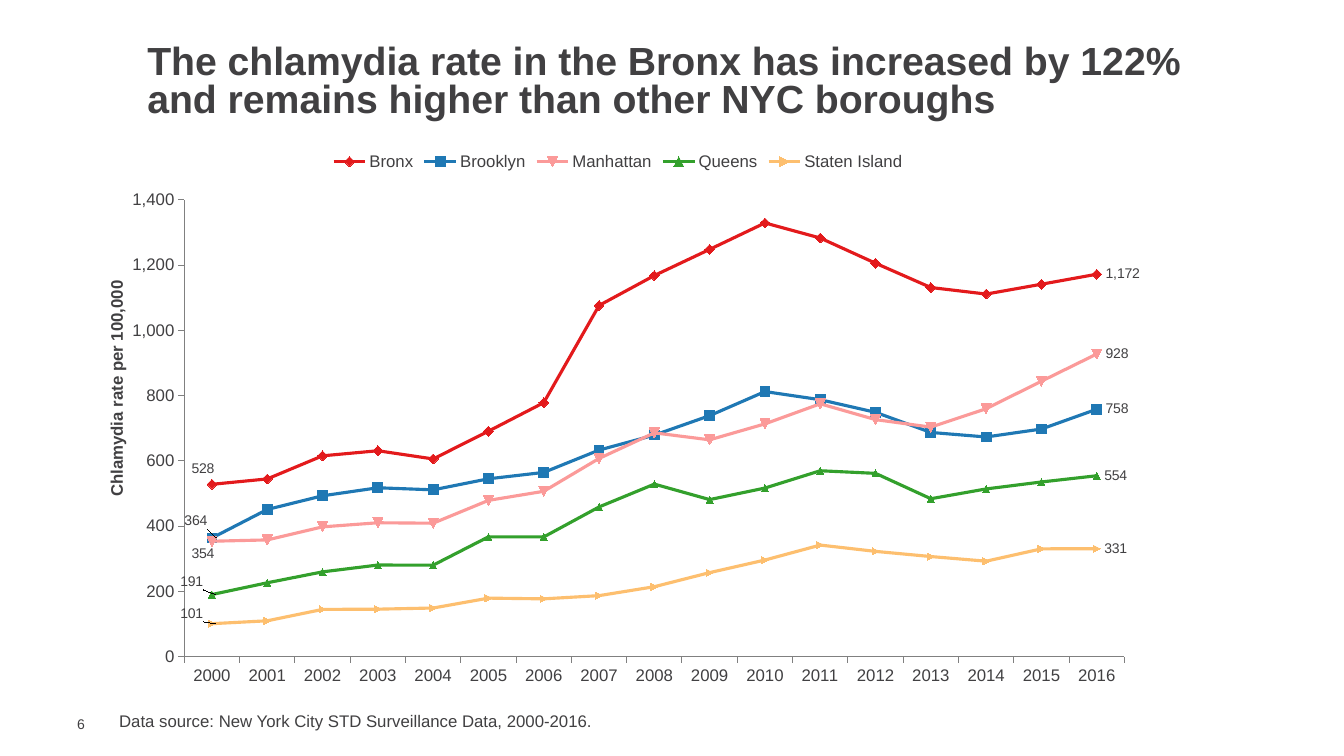
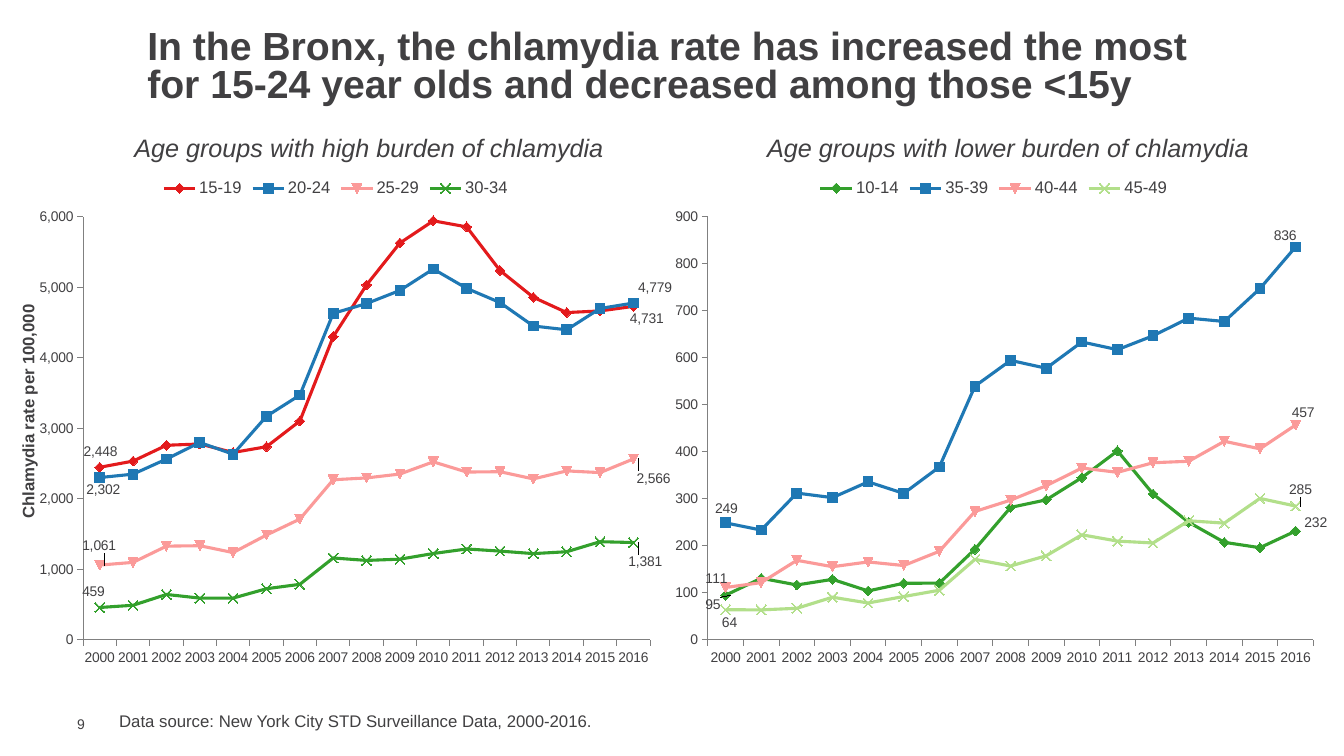
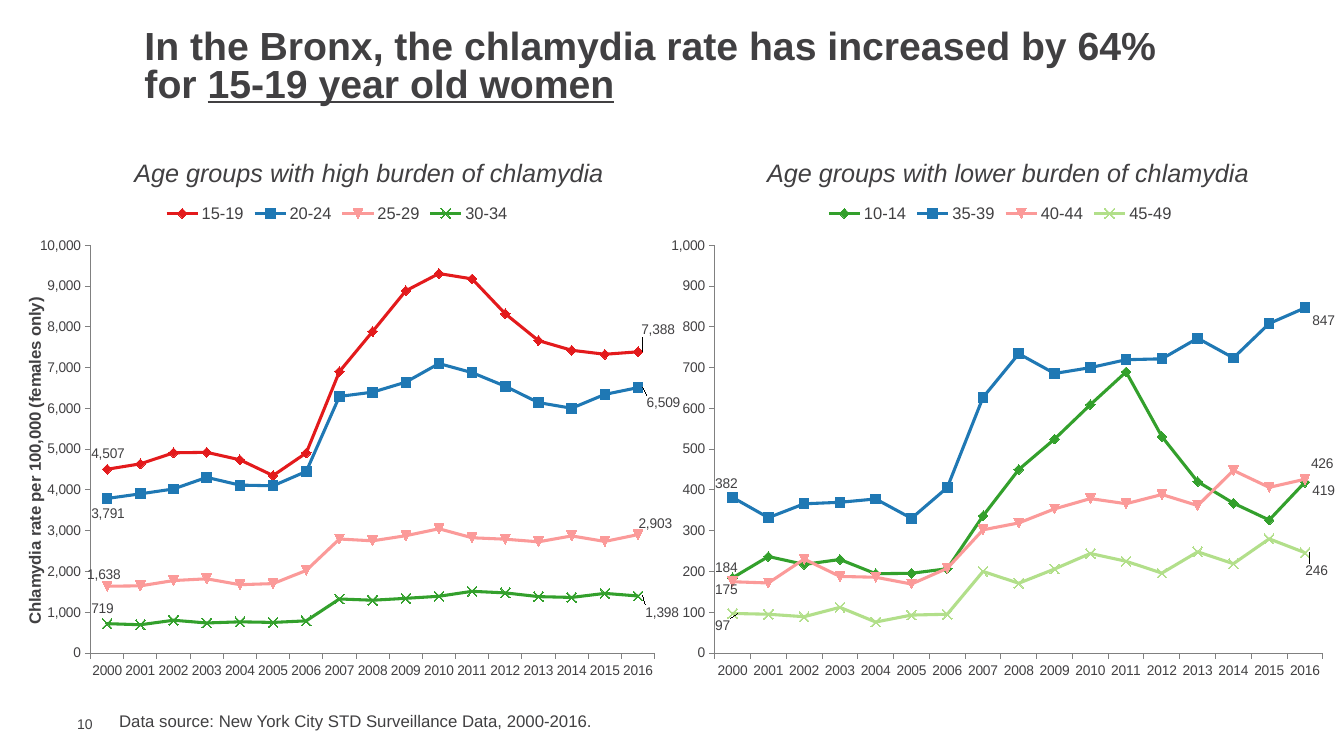
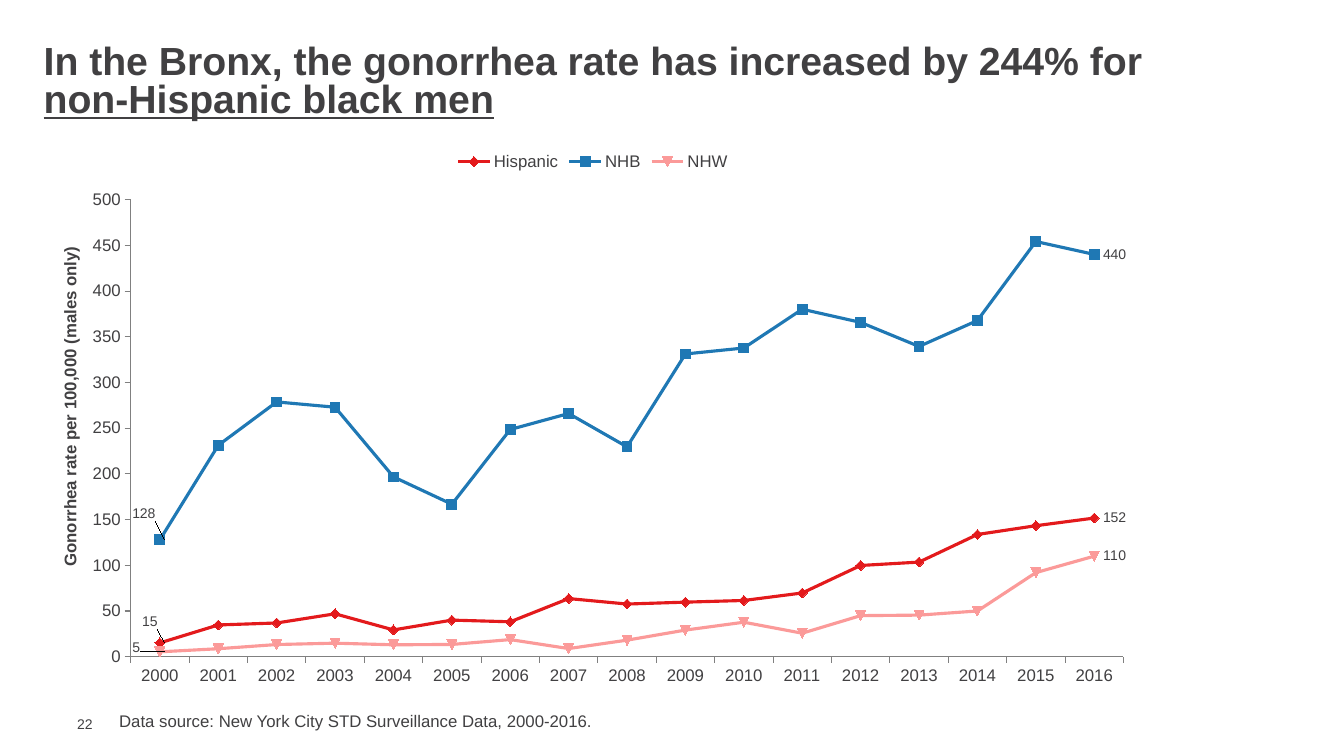
"""Builds four slides of line charts on infection rates in New York City."""
import dataclasses

import pptx
import pptx.chart.data
import pptx.dml.color
import pptx.enum.chart
import pptx.enum.text
import pptx.oxml
import pptx.oxml.ns
import pptx.util

Pt = pptx.util.Pt
Mark = pptx.enum.chart.XL_MARKER_STYLE
Align = pptx.enum.text.PP_ALIGN
Anchor = pptx.enum.text.MSO_ANCHOR
Qn = pptx.oxml.ns.qn


@dataclasses.dataclass(frozen=True)
class Theme:
    """Colours, font and type sizes of the deck."""
    ink: str = "414042"
    axis: str = "808080"
    red: str = "E31A1C"
    blue: str = "1F78B4"
    pink: str = "FB9A99"
    green: str = "33A02C"
    lime: str = "B2DF8A"
    gold: str = "FDBF6F"
    face: str = "Arial"
    head: int = 28
    sub: int = 18
    body: int = 12
    small: int = 10
    digits: str = "#,##0"


THEME = Theme()
YEARS = [str(year) for year in range(2000, 2017)]
SOURCE = "Data source: New York City STD Surveillance Data, 2000-2016."
HIGH = "Age groups with high burden of chlamydia"
LOW = "Age groups with lower burden of chlamydia"
RATE = "Chlamydia rate per 100,000"

TRIO = [(THEME.red, Mark.DIAMOND, 7), (THEME.blue, Mark.SQUARE, 7),
        (THEME.pink, Mark.AUTOMATIC, 7)]
AREAS = TRIO + [(THEME.green, Mark.AUTOMATIC, 5),
                (THEME.gold, Mark.AUTOMATIC, 5)]
OLDER = TRIO + [(THEME.green, Mark.X, 7)]
OTHER = [(THEME.green, Mark.DIAMOND, 7)] + TRIO[1:] + [(THEME.lime, Mark.X, 7)]


def layout(spot, target="", mode="edge"):
    """Return the XML of a manual chart layout from fractions x, y, w and h."""
    parts = [target and f'<c:layoutTarget val="{target}"/>']
    if mode == "edge":
        parts += ['<c:xMode val="edge"/>', '<c:yMode val="edge"/>']
    parts += [f'<c:{key} val="{val:.4f}"/>' for key, val in zip("xywh", spot)]
    return (f'<c:layout {pptx.oxml.ns.nsdecls("c")}><c:manualLayout>'
            + "".join(parts) + "</c:manualLayout></c:layout>")


def place(node, index, spot, target=""):
    """Give a chart part a manual layout as its child at the index."""
    for old in node.findall(Qn("c:layout")):
        node.remove(old)
    node.insert(index, pptx.oxml.parse_xml(layout(spot, target)))


def labels(moves, wide, high):
    """Return labels for the first and last point, moved by points."""
    flags = "".join(f'<c:show{key} val="%d"/>' if key == "Val"
                    else f'<c:show{key} val="0"/>'
                    for key in ("LegendKey", "Val", "CatName", "SerName",
                                "Percent", "BubbleSize"))
    items = ""
    for index, (x, y) in zip((0, len(YEARS) - 1), moves):
        shift = layout((x / wide, y / high), mode="") if x or y else ""
        items += (f'<c:dLbl><c:idx val="{index}"/>{shift}'
                  f'<c:numFmt formatCode="{THEME.digits}" sourceLinked="0"/>'
                  f'<c:dLblPos val="r"/>{flags % 1}</c:dLbl>')
    lead = ('<c:extLst><c:ext uri="{CE6537A1-D6FC-4f65-9D91-7224C49458BB}" '
            'xmlns:c15="http://schemas.microsoft.com/office/drawing/2012/chart">'
            '<c15:showLeaderLines val="1"/></c:ext></c:extLst>')
    return pptx.oxml.parse_xml(
        f'<c:dLbls {pptx.oxml.ns.nsdecls("c")}>{items}{flags % 0}{lead}</c:dLbls>')


class Deck:
    """Holds the theme, the presentation and the current slide."""

    def __init__(self, theme):
        """Start an empty wide deck."""
        self.theme = theme
        self.file = pptx.Presentation()
        self.file.slide_width, self.file.slide_height = Pt(960), Pt(540)
        self.slide = None

    def style(self, font, size, color=None, **more):
        """Set a font from a dict of format values."""
        form = {"name": self.theme.face, "size": Pt(size), **more}
        for key, val in form.items():
            setattr(font, key, val)
        self.tint(font.color, color or self.theme.ink)

    def tint(self, color, code):
        """Set a colour from its hex code."""
        color.rgb = pptx.dml.color.RGBColor.from_string(code)

    def paint(self, form, code, width):
        """Set the line colour and width of a chart part."""
        self.tint(form.line.color, code)
        form.line.width = Pt(width)

    def page(self, number, title, box, under=""):
        """Add a slide with its title, number and data source."""
        self.slide = self.file.slides.add_slide(self.file.slide_layouts[5])
        head = self.slide.shapes.title
        head.left, head.top, head.width, head.height = map(Pt, box)
        frame = head.text_frame
        form = {"auto_size": pptx.enum.text.MSO_AUTO_SIZE.NONE,
                "word_wrap": True, "vertical_anchor": Anchor.MIDDLE}
        for key, val in form.items():
            setattr(frame, key, val)
        para = frame.paragraphs[0]
        para.alignment, para.line_spacing = Align.LEFT, 0.8
        for text, line in ((title, False), (under, True)):
            if text:
                run = para.add_run()
                run.text = text
                self.style(run.font, self.theme.head, bold=True, underline=line)
        edge = {"margin_left": Pt(7.2), "margin_right": 0, "margin_top": 0,
                "margin_bottom": 0, "vertical_anchor": Anchor.MIDDLE}
        self.text(str(number), (48, 511, 31, 12), self.theme.small, edge)
        self.text(SOURCE, (78, 504, 714, 22), self.theme.body)

    def text(self, words, box, size, edge=None, align=Align.LEFT, **more):
        """Add a text box of one paragraph."""
        frame = self.slide.shapes.add_textbox(*map(Pt, box)).text_frame
        for key, val in {"word_wrap": True, **(edge or {})}.items():
            setattr(frame, key, val)
        para = frame.paragraphs[0]
        para.alignment = align
        run = para.add_run()
        run.text = words
        self.style(run.font, size, **more)

    def pair(self, top):
        """Add the two headings above a pair of charts."""
        for left, words in ((47.5, HIGH), (504, LOW)):
            self.text(words, (left, top, 432, 29), self.theme.sub,
                      align=Align.CENTER, italic=True)

    def chart(self, box, plot, looks, rows, top, step, size, name="", spot=None):
        """Add a line chart with labels at both ends of each line."""
        data = pptx.chart.data.CategoryChartData(number_format="0.0")
        data.categories = YEARS
        for row in rows:
            data.add_series(row[0], row[1])
        kind = pptx.enum.chart.XL_CHART_TYPE.LINE_MARKERS
        chart = self.slide.shapes.add_chart(kind, *map(Pt, box), data).chart
        chart.has_title = False
        self.style(chart.font, self.theme.small)
        chart.has_legend = True
        chart.legend.position = pptx.enum.chart.XL_LEGEND_POSITION.TOP
        chart.legend.include_in_layout = False
        self.style(chart.legend.font, self.theme.body)
        chart.plots[0].vary_by_categories = False
        for axis in (chart.category_axis, chart.value_axis):
            axis.has_major_gridlines = False
            axis.major_tick_mark = pptx.enum.chart.XL_TICK_MARK.OUTSIDE
            self.style(axis.tick_labels.font, size)
            self.paint(axis.format, self.theme.axis, 0.75)
        form = {"minimum_scale": 0, "maximum_scale": top, "major_unit": step}
        for key, val in form.items():
            setattr(chart.value_axis, key, val)
        ticks = chart.value_axis.tick_labels
        ticks.number_format, ticks.number_format_is_linked = self.theme.digits, False
        if name:
            self.name(chart.value_axis.axis_title, name, spot)
        area = chart.plots[0]._element.getparent()
        place(area, 0, plot, "inner")
        for line, row, look in zip(chart.plots[0].series, rows, looks):
            self.line(line, look, labels(row[2:], *box[2:]))

    def name(self, title, words, spot):
        """Write an upright axis title at the spot."""
        run = title.text_frame.paragraphs[0].add_run()
        run.text = words
        self.style(run.font, self.theme.body, bold=True)
        body = title._element.find(".//" + Qn("a:bodyPr"))
        body.set("rot", "-5400000")
        body.set("vert", "horz")
        place(title._element, 1, spot)

    def line(self, line, look, tags):
        """Format one line of a chart with its markers and labels."""
        color, mark, size = look
        line.smooth = False
        self.paint(line.format, color, 2.25)
        line.marker.style, line.marker.size = mark, size
        line.marker.format.fill.solid()
        self.tint(line.marker.format.fill.fore_color, color)
        self.paint(line.marker.format, color, 0.75)
        line._element.find(Qn("c:cat")).addprevious(tags)


END = (0, 0)
BOROUGHS = [
    ("Bronx", [528.1, 544.6, 615.4, 630.9, 605.8, 690.9, 778.4, 1076.2, 1167.8,
               1248, 1328.9, 1282.7, 1205.5, 1131.1, 1111.1, 1141.2, 1171.9],
     (-21, -11), END),
    ("Brooklyn", [363.7, 451, 492.9, 517.5, 511.2, 545, 564.6, 633, 678.9,
                  738.4, 812.4, 787.4, 748.8, 687, 673.1, 697.4, 758.2],
     (-26, -12), END),
    ("Manhattan", [353.7, 357.8, 397.8, 410.3, 408.9, 478.8, 506.7, 607.4, 685.8,
                   664.4, 713.2, 774.9, 726.3, 703.3, 759.8, 844.1, 927.5],
     (-21, 9), END),
    ("Queens", [190.5, 226.4, 259.9, 280.8, 280.4, 367.2, 366.9, 458.8, 528.7,
                481.3, 516.7, 569.7, 561.6, 484, 514, 535.2, 554.3],
     (-28, -9), END),
    ("Staten Island", [101.1, 110, 144.9, 145.6, 149.1, 179.4, 177.2, 187.1, 214.4,
                       257.6, 296.1, 342, 322.6, 306.8, 292.6, 330.4, 330.9],
     (-28, -7), END),
]
ALL_HIGH = [
    ("15-19", [2448, 2536, 2760.2, 2778.7, 2657.8, 2739.6, 3104.2, 4301.6, 5035.8,
               5630.1, 5945, 5858.7, 5240.2, 4860.3, 4643.5, 4666.5, 4731.1],
     (-18, -11), (-9, 9)),
    ("20-24", [2302.3, 2350.9, 2564.8, 2800, 2633.9, 3171.8, 3473, 4632.8, 4771.3,
               4956.9, 5261.7, 4986.7, 4785.5, 4452.7, 4399.1, 4701.7, 4778.8],
     (-16, 9), (-3, -11)),
    ("25-29", [1061.1, 1099, 1329.2, 1335.5, 1238.4, 1487, 1713.4, 2271.5, 2297.4,
               2352.4, 2524.9, 2380.6, 2385.3, 2282.9, 2396.6, 2372.4, 2566],
     (-19, -14), (-4, 14)),
    ("30-34", [458.9, 490.4, 644.4, 592.2, 592.5, 725.5, 787.7, 1161.9, 1126.7,
               1144.8, 1224.7, 1289.7, 1259.2, 1223.5, 1250.2, 1392.5, 1380.9],
     (-19, -11), (-10, 14)),
]
ALL_LOW = [
    ("10-14", [95, 131.1, 116.8, 128.7, 104.1, 120.5, 120.7, 192.9, 281.8,
               297.9, 345.2, 402.1, 310.4, 250.2, 207.5, 196.1, 231.5],
     (-21, 7), (0, -6)),
    ("35-39", [248.9, 233.6, 312.3, 302.6, 336.2, 311.6, 367.9, 540, 594.8,
               578, 634, 617.6, 647.1, 684.7, 677.5, 747.5, 836.2],
     (-14, -10), (-22, -8)),
    ("40-44", [111.4, 121.8, 169.3, 155.7, 165.8, 158.1, 188.4, 273.2, 297.3,
               327.9, 365.7, 356.5, 376.9, 380, 422.5, 406.5, 457.2],
     (-21, -6), (-9, -9)),
    ("45-49", [64.1, 63.8, 67.2, 90.7, 78.5, 92.2, 105.6, 171.3, 157.2,
               178.9, 223.6, 210.1, 206.2, 253.4, 248.4, 301, 284.7],
     (-9, 9), (-11, -12)),
]
WOMEN_HIGH = [
    ("15-19", [4507, 4639.3, 4909.6, 4920.8, 4738.1, 4350.4, 4906.2, 6902.6, 7885.1,
               8883.1, 9306.3, 9175, 8319.7, 7662.2, 7424.9, 7327, 7387.8],
     (-18, -11), (-4, -16)),
    ("20-24", [3790.6, 3902.9, 4022.4, 4306.9, 4117, 4101.2, 4452.2, 6293.9, 6397.2,
               6643.1, 7099.1, 6876.4, 6542.9, 6141.8, 6003.4, 6343.1, 6509.1],
     (-18, 11), (0, 11)),
    ("25-29", [1638.4, 1645.9, 1776.3, 1819.8, 1675.4, 1701.8, 2025.3, 2795.2, 2751.1,
               2876.1, 3047, 2825.6, 2791, 2726.3, 2871.7, 2736.3, 2903.4],
     (-21, -8), (-6, -8)),
    ("30-34", [719.4, 692.8, 803, 736.5, 764.8, 749.9, 788.8, 1325.3, 1293.9,
               1340.6, 1391.7, 1513.3, 1474.3, 1382.2, 1363.2, 1461.9, 1397.8],
     (-18, -11), (-1, 12)),
]
WOMEN_LOW = [
    ("10-14", [184.4, 236.6, 217.2, 229.3, 194.4, 195.5, 206.7, 336.3, 450,
               524.6, 609.1, 689.4, 530.9, 420.1, 367.4, 326.1, 419],
     (-19, -7), (-1, 6)),
    ("35-39", [381.6, 331.8, 365.9, 369.6, 377.8, 330.3, 405.7, 627, 734,
               685.6, 699.9, 719.4, 721.5, 772, 723.7, 808.1, 846.5],
     (-19, -10), (-1, 9)),
    ("40-44", [174.7, 171.7, 230.3, 187.8, 185.7, 169.1, 207.6, 302, 319,
               353.4, 378.6, 366.1, 388.7, 361.6, 447.7, 406.2, 426.1],
     (-19, 6), (-2, -11)),
    ("45-49", [97, 95, 89, 112, 76, 93, 95, 200, 171,
               206, 244, 225, 196, 248, 219, 280, 246],
     (-19, 9), (-6, 13)),
]
MEN = [
    ("Hispanic", [15.1, 34.7, 36.9, 46.9, 29.3, 40, 38.2, 63.6, 57.6,
                  59.7, 61.5, 69.7, 99.8, 103.5, 133.7, 143.3, 151.7],
     (-19, -15), END),
    ("NHB", [127.8, 231.3, 278.8, 273, 196.7, 166.8, 248.6, 266.1, 229.6,
             331.3, 337.8, 380.2, 365.8, 339.5, 367.9, 454.3, 440.2],
     (-26, -19), END),
    ("NHW", [5.3, 8.7, 13.3, 14.8, 13, 13.4, 18.7, 8.9, 18.1,
             29.1, 37.7, 25.7, 44.9, 45.5, 50, 92, 110],
     (-26, -3), END),
]


def main():
    """Build and save the deck."""
    deck = Deck(THEME)
    big, small = THEME.body, THEME.small

    deck.page(6, "The chlamydia rate in the Bronx has increased by 122% and "
              "remains higher than other NYC boroughs", (98, 29, 765, 61))
    deck.chart((65.5, 101, 752, 390), (0.088, 0.107, 0.893, 0.837), AREAS,
               BOROUGHS, 1400, 200, big, RATE, (0.011, 0.249))

    deck.page(9, "In the Bronx, the chlamydia rate has increased the most for "
              "15-24 year olds and decreased among those <15y", (98, 18, 765, 61))
    deck.chart((6, 120, 474, 361), (0.114, 0.097, 0.866, 0.837), OLDER,
               ALL_HIGH, 6000, 1000, small, RATE, (0.01, 0.259))
    deck.chart((474, 120, 474, 361), (0.067, 0.097, 0.917, 0.837), OTHER,
               ALL_LOW, 900, 100, small)
    deck.pair(91)

    deck.page(10, "In the Bronx, the chlamydia rate has increased by 64% for ",
              (96, 18, 768, 61), "15-19 year old women")
    deck.chart((6, 138, 480, 348), (0.125, 0.107, 0.858, 0.837), OLDER,
               WOMEN_HIGH, 10000, 1000, small, RATE + " (females only)",
               (0.02, 0.193))
    deck.chart((479.5, 138, 474, 348), (0.063, 0.107, 0.931, 0.837), OTHER,
               WOMEN_LOW, 1000, 100, small)
    deck.pair(109)

    deck.page(22, "In the Bronx, the gonorrhea rate has increased by 244% for ",
              (24, 29, 864, 61), "non-Hispanic black men")
    deck.chart((29.5, 101, 788, 390), (0.081, 0.107, 0.9, 0.837), TRIO,
               MEN, 500, 50, big, "Gonorrhea rate per 100,000 (males only)",
               (0.014, 0.187))

    deck.file.save("out.pptx")


if __name__ == "__main__":
    main()
